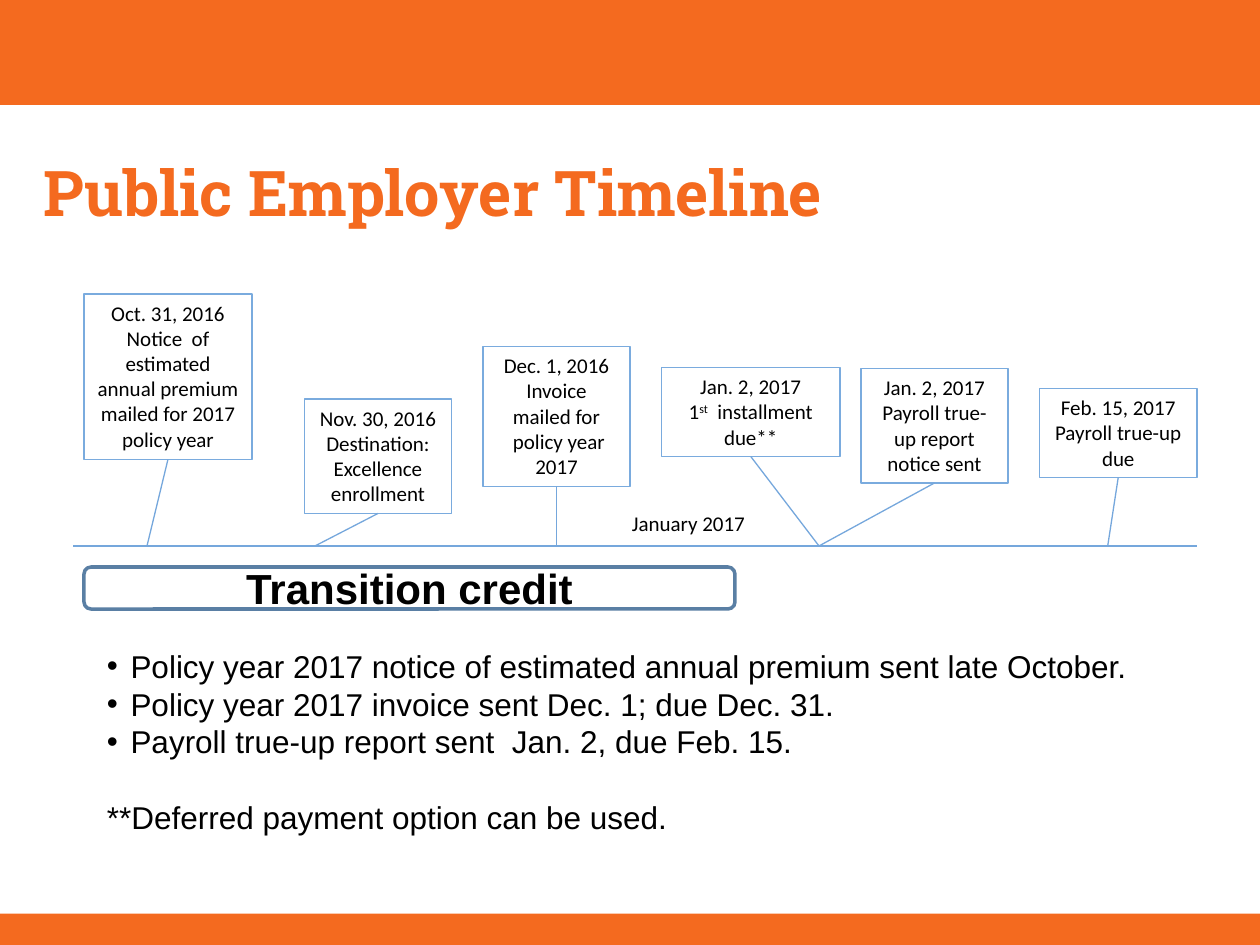
from lxml import etree
from pptx import Presentation
from pptx import util as u
from pptx.dml.color import RGBColor
from pptx.enum import shapes, text
from pptx.oxml.ns import qn

# Content
TITLE = "Public Employer Timeline"
AXIS_LABEL = "January 2017"
CREDIT = "Transition credit"
# left, top, width, text lines, x on the axis, paragraphs ("^" encloses superscript)
EVENTS = [
    (48, 168, 96, 6, 84, ["Oct. 31, 2016",
                          "Notice  of estimated annual premium mailed for 2017 policy year"]),
    (174, 228, 84, 4, 180, ["Nov. 30, 2016", "Destination: Excellence enrollment"]),
    (276, 198, 84, 5, 318, ["Dec. 1, 2016", "Invoice mailed for", " policy year 2017"]),
    (378, 210, 102, 3, 468, ["Jan. 2, 2017", "1^st^  installment due**"]),
    (492, 210.6, 84, 4, 468, ["Jan. 2, 2017", "Payroll true-up report notice sent"]),
    (594, 222, 90, 3, 633, ["Feb. 15, 2017", "Payroll true-up due"]),
]
BULLETS = [
    "Policy year 2017 notice of estimated annual premium sent late October.",
    "Policy year 2017 invoice sent Dec. 1; due Dec. 31.",
    "Payroll true-up report sent  Jan. 2, due Feb. 15.",
]
FOOTNOTE = "**Deferred payment option can be used."

THEME = {
    "orange": "F46A1F", "white": "FFFFFF", "black": "000000",
    "axis": "75A7DC", "event": "7AABDE", "credit": "5A7FA4",
    "title": ("Roboto Slab", 36, True), "label": ("Calibri", 12, False),
    "body": ("Arial", 18, False), "heading": ("Arial", 24, True),
}
AXIS_Y = 312
LINE_HEIGHT, INSETS = 14.55, 7.2
CENTER = text.PP_ALIGN.CENTER

deck = Presentation()
deck.slide_width, deck.slide_height = u.Pt(720), u.Pt(540)
page = deck.slides.add_slide(deck.slide_layouts[6])


def color(name):
    return RGBColor.from_string(THEME[name])


def add_box(kind, frame, fill=None, line=None, width=0.75):
    box = page.shapes.add_shape(kind, *map(u.Pt, frame))
    box.shadow.inherit = False
    if fill:
        box.fill.solid()
        box.fill.fore_color.rgb = color(fill)
    else:
        box.fill.background()
    if line:
        box.line.color.rgb = color(line)
        box.line.width = u.Pt(width)
    else:
        box.line.fill.background()
    return box


def add_text_box(frame):
    return page.shapes.add_textbox(*map(u.Pt, frame))


def write(box, lines, style, ink="black", align=None, anchor=text.MSO_ANCHOR.TOP,
          grow=True, bullets=0):
    frame = box.text_frame
    frame.word_wrap = True
    frame.vertical_anchor = anchor
    if grow:
        frame.auto_size = text.MSO_AUTO_SIZE.SHAPE_TO_FIT_TEXT
    for index, line in enumerate(lines):
        para = frame.add_paragraph() if index else frame.paragraphs[0]
        if index < bullets:
            props = para._p.get_or_add_pPr()
            props.set("marL", str(u.Pt(13.5)))
            props.set("indent", str(-u.Pt(13.5)))
            etree.SubElement(props, qn("a:buFont")).set("typeface", "Arial")
            etree.SubElement(props, qn("a:buChar")).set("char", "•")
        if align is not None:
            para.alignment = align
        para.font.name, size, para.font.bold = THEME[style]
        para.font.size = u.Pt(size)
        para.font.color.rgb = color(ink)
        for part, words in enumerate(line.split("^")):
            span = para.add_run()
            span.text = words
            if part % 2:
                span._r.get_or_add_rPr().set("baseline", "30000")
    return frame


def add_line(x1, y1, x2, y2):
    line = page.shapes.add_connector(shapes.MSO_CONNECTOR.STRAIGHT,
                                     *map(u.Pt, (x1, y1, x2, y2)))
    line.line.color.rgb = color("axis")
    line.line.width = u.Pt(0.75)
    etree.SubElement(line._element.spPr, qn("a:effectLst"))
    return line


RECT = shapes.MSO_SHAPE.RECTANGLE

# Bands and title
add_box(RECT, (0, 0, 720, 60), fill="orange")
add_box(RECT, (0, 522, 720, 18), fill="orange")
write(add_text_box((18, 84, 678, 51)), [TITLE], "title", ink="orange")

# Timeline axis with its events
add_line(42, AXIS_Y, 684, AXIS_Y)
for left, top, width, line_count, axis_x, lines in EVENTS:
    height = line_count * LINE_HEIGHT + INSETS
    event = add_box(RECT, (left, top, width, height), line="event")
    write(event, lines, "label", align=CENTER)
    leader = add_line(left + width / 2, top + height, axis_x, AXIS_Y)
    leader.begin_connect(event, 2)
write(add_text_box((354, 288, 84, 21.6)), [AXIS_LABEL], "label")

# Transition credit bar
credit = add_box(shapes.MSO_SHAPE.ROUNDED_RECTANGLE, (48, 324, 372, 24),
                 fill="white", line="credit", width=2)
write(credit, [CREDIT], "heading", align=CENTER,
      anchor=text.MSO_ANCHOR.MIDDLE, grow=False)

# Notes below the timeline
notes = write(add_text_box((54, 366, 600, 152.6)), BULLETS + [FOOTNOTE], "body",
              bullets=len(BULLETS))
notes.paragraphs[-1].space_before = u.Pt(21.6)

deck.save("out.pptx")
